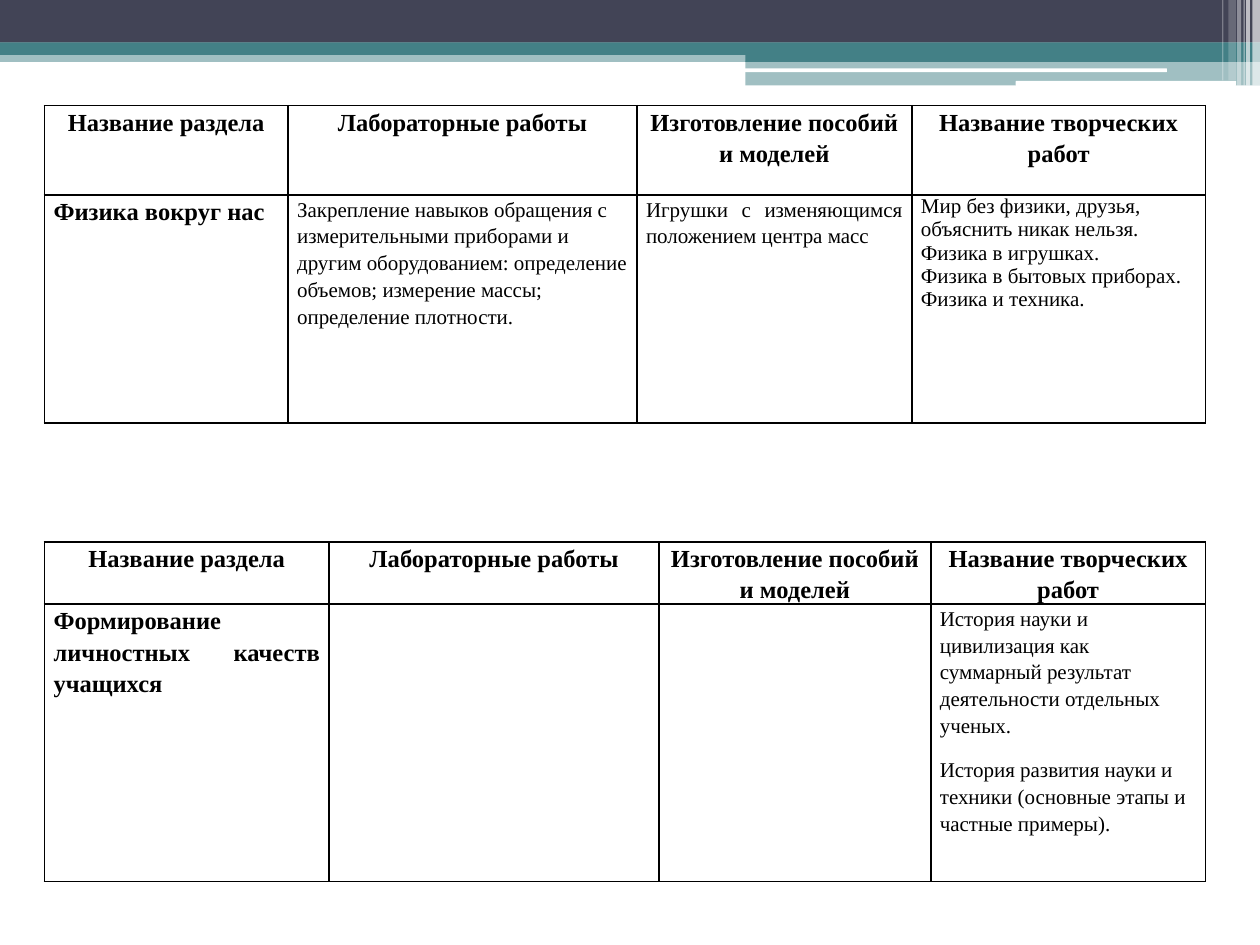
from dataclasses import dataclass

import lxml.etree
import pptx
import pptx.dml.color
import pptx.enum.shapes
import pptx.enum.text
import pptx.oxml.ns
import pptx.util

Pt = pptx.util.Pt
qn = pptx.oxml.ns.qn
Align = pptx.enum.text.PP_ALIGN
Kind = pptx.enum.shapes.MSO_SHAPE

FONT = "Times New Roman"
DARK, TEAL, WHITE, BLACK = "424456", "438086", "FFFFFF", "000000"


@dataclass
class Bar:
    left: float
    top: float
    width: float
    height: float
    color: str
    alpha: int = 100
    kind: int = Kind.RECTANGLE


@dataclass
class Text:
    lines: tuple = ()
    size: int = 12
    bold: bool = False
    align: int = Align.LEFT
    space: float = 1.15
    after: int = 0


@dataclass
class Grid:
    top: float
    cols: tuple
    rows: tuple
    body: tuple


def head(*lines: str) -> Text:
    return Text(lines, 14, True, Align.CENTER)


def topic(line: str) -> Text:
    return Text((line,), 14, True, Align.JUSTIFY)


def rgb(color: str) -> pptx.dml.color.RGBColor:
    return pptx.dml.color.RGBColor.from_string(color)


def draw_bar(slide, bar: Bar) -> None:
    shape = slide.shapes.add_shape(
        bar.kind, Pt(bar.left), Pt(bar.top), Pt(bar.width), Pt(bar.height))
    shape.shadow.inherit = False
    shape.line.fill.background()
    shape.fill.solid()
    shape.fill.fore_color.rgb = rgb(bar.color)
    if bar.alpha < 100:
        tint = next(shape.fill._xPr.iter(qn("a:srgbClr")))
        lxml.etree.SubElement(tint, qn("a:alpha"), val=str(bar.alpha * 1000))


def add_edges(cell) -> None:
    """Give the cell a thin black border on all four sides."""
    props = cell._tc.get_or_add_tcPr()
    for side in ("L", "R", "T", "B"):
        line = lxml.etree.SubElement(props, qn(f"a:ln{side}"), w=str(Pt(1)))
        fill = lxml.etree.SubElement(line, qn("a:solidFill"))
        lxml.etree.SubElement(fill, qn("a:srgbClr"), val=BLACK)


def fill_cell(cell, text: Text) -> None:
    cell.margin_left = cell.margin_right = Pt(5.2)
    cell.margin_top = cell.margin_bottom = 0
    add_edges(cell)
    cell.fill.background()
    frame = cell.text_frame
    frame.text = "\n".join(text.lines)
    for para in frame.paragraphs:
        para.alignment = text.align
        para.line_spacing = text.space
        para.space_after = Pt(text.after)
        para.font.name = FONT
        para.font.size = Pt(text.size)
        para.font.bold = text.bold
        para.font.color.rgb = rgb(BLACK)


def draw_grid(slide, grid: Grid) -> None:
    cells = (HEADS, grid.body)
    table = slide.shapes.add_table(
        len(cells), len(HEADS), Pt(25.4), Pt(grid.top),
        Pt(sum(grid.cols)), Pt(sum(grid.rows))).table
    table.first_row = table.horz_banding = False
    for col, width in zip(table.columns, grid.cols):
        col.width = Pt(width)
    for row, height, texts in zip(table.rows, grid.rows, cells):
        row.height = Pt(height)
        for cell, text in zip(row.cells, texts):
            fill_cell(cell, text)


BARS = (
    Bar(0, 28.8, 720, 6.6, TEAL, 50),
    Bar(0, 0, 720, 24.4, DARK),
    Bar(0, 24.2, 720, 7.2, TEAL),
    Bar(426, 28.2, 294, 7.2, TEAL),
    Bar(426, 34.8, 294, 14, TEAL, 50),
    Bar(425.6, 39.1, 241.2, 2.2, WHITE, kind=Kind.ROUNDED_RECTANGLE),
    Bar(580.4, 46.2, 126, 2.9, WHITE, kind=Kind.ROUNDED_RECTANGLE),
)
# Light stripes at the right end: left, width, height, opacity
STRIPES = (
    (715.7, 4.3, 49, 65),
    (712.1, 2.2, 49, 65),
    (710.6, 0.7, 49, 60),
    (707, 2.2, 49, 40),
    (702, 4.3, 46, 20),
    (698.4, 0.7, 46, 30),
)

HEADS = (
    head("Название раздела"),
    head("Лабораторные работы"),
    head("Изготовление пособий и моделей"),
    head("Название творческих", "работ"),
)
GRIDS = (
    Grid(60.3, (139.2, 199.4, 157.1, 167.8), (51.1, 130.3), (
        topic("Физика вокруг нас"),
        Text(("Закрепление навыков обращения с измерительными приборами и "
              "другим оборудованием: определение объемов; измерение массы; "
              "определение плотности.",), after=10),
        Text(("Игрушки с изменяющимся положением центра масс",),
             align=Align.JUSTIFY),
        Text(("Мир без физики, друзья, объяснить никак нельзя.",
              "Физика в игрушках.",
              "Физика в бытовых приборах.",
              "Физика и техника."), space=1),
    )),
    Grid(309.6, (162.7, 188.6, 155.2, 157), (35.4, 158.4), (
        topic("Формирование личностных качеств учащихся"),
        Text(),
        Text(),
        Text(("История науки и цивилизация как суммарный результат "
              "деятельности отдельных ученых.",
              "История развития науки и техники (основные этапы и частные "
              "примеры)."), after=10),
    )),
)


def main() -> None:
    deck = pptx.Presentation()
    deck.slide_width, deck.slide_height = Pt(720), Pt(540)
    slide = deck.slides.add_slide(deck.slide_layouts[6])
    for bar in BARS:
        draw_bar(slide, bar)
    for left, width, height, alpha in STRIPES:
        draw_bar(slide, Bar(left, 0, width, height, WHITE, alpha))
    for grid in GRIDS:
        draw_grid(slide, grid)
    deck.save("out.pptx")


if __name__ == "__main__":
    main()
